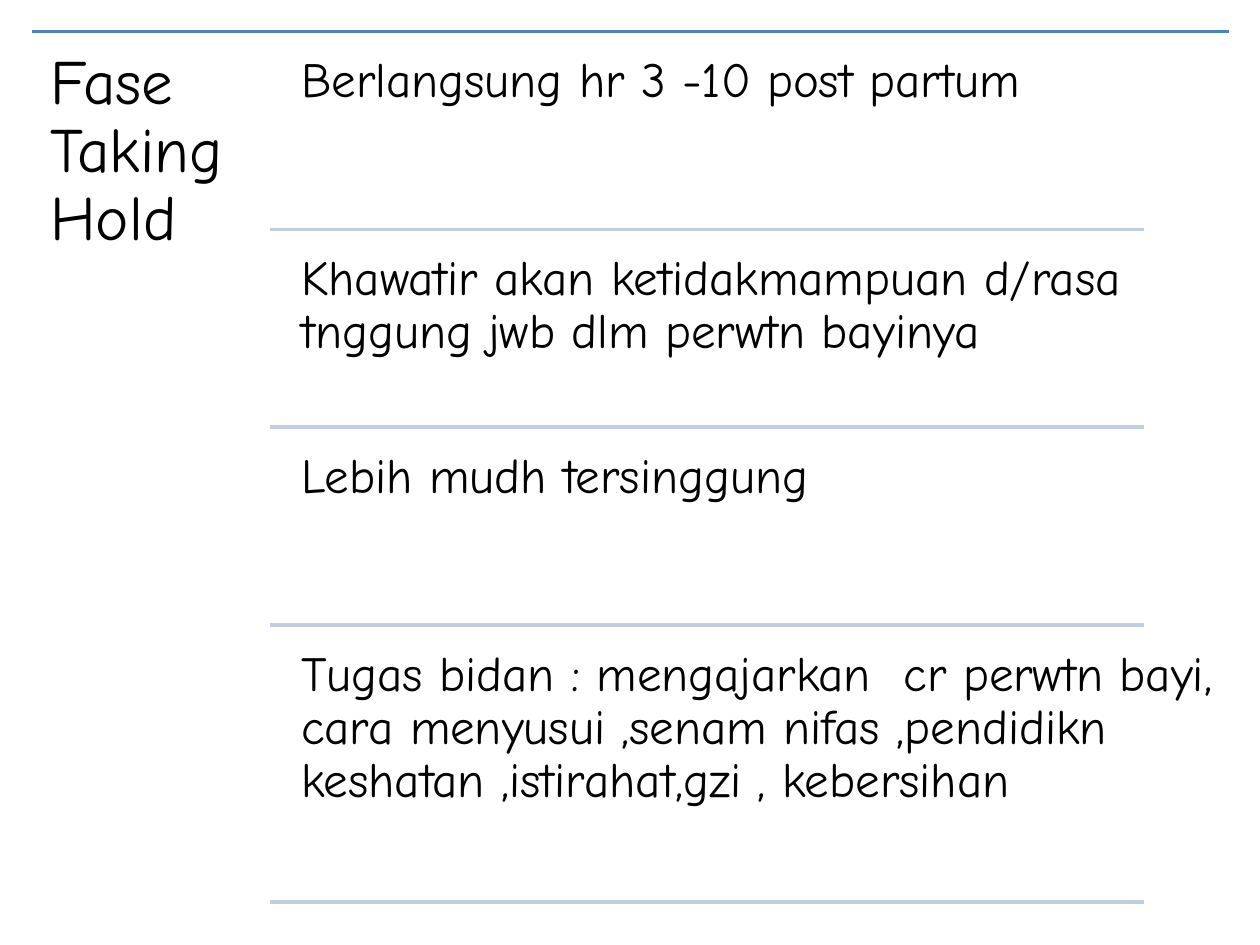
from pptx import Presentation
from pptx.dml.color import RGBColor
from pptx.enum.shapes import MSO_CONNECTOR as CONN
from pptx.enum.text import MSO_ANCHOR as ANCHOR, MSO_AUTO_SIZE as AUTO
from pptx.oxml.ns import qn
from pptx.util import Inches, Pt
from lxml.etree import SubElement


def rgb(value):
    return RGBColor.from_string(value)


def write(tf, text, size=28, font="Comic Neue", color="000000", spacing=0.9, after=0.35):
    p = tf.paragraphs[0]
    p.line_spacing = spacing
    p.space_after = Pt(round(size * after, 1))
    r = p.add_run()
    r.text = text
    r.font.size = Pt(size)
    r.font.name = font
    r.font.color.rgb = rgb(color)


class Deck:
    accent = "4F81BD"
    pale = "C2CDE1"
    weight = 2

    def __init__(self, width, height):
        self.prs = Presentation()
        self.prs.slide_width = Inches(width)
        self.prs.slide_height = Inches(height)
        self.s = self.prs.slides.add_slide(self.prs.slide_layouts[6])

    def text(self, left, top, width, height, text, inset=0.12, **style):
        sp = self.s.shapes.add_textbox(Inches(left), Inches(top), Inches(width), Inches(height))
        tf = sp.text_frame
        tf.word_wrap = True
        tf.auto_size = AUTO.NONE
        tf.vertical_anchor = ANCHOR.TOP
        tf.margin_left = tf.margin_right = Inches(inset)
        tf.margin_top = tf.margin_bottom = Inches(inset)
        write(tf, text, **style)

    def rule(self, left, right, y, color):
        sp = self.s.shapes.add_connector(
            CONN.STRAIGHT, Inches(left), Inches(y), Inches(right), Inches(y))
        sp.line.color.rgb = rgb(color)
        sp.line.width = Pt(self.weight)
        SubElement(sp.element.spPr, qn("a:effectLst"))


ROWS = [
    ("Berlangsung hr 3 -10 post partum", 7.41, 1.5),
    ("Khawatir akan ketidakmampuan d/rasa tnggung jwb dlm perwtn bayinya", 7.41, 1.5),
    ("Lebih mudh tersinggung", 7.41, 1.5),
    ("Tugas bidan : mengajarkan  cr perwtn bayi, cara menyusui ,senam nifas ,"
     "pendidikn keshatan ,istirahat,gzi , kebersihan", 7.47, 2.13),
]


def main():
    deck = Deck(10, 7.5)
    margin, gap = 0.25, 0.07
    deck.rule(margin, 9.75, margin, deck.accent)
    deck.text(margin, margin, 1.89, 6.99, "Fase Taking Hold", inset=0.15, size=36)
    y = margin
    for text, width, height in ROWS:
        y += gap
        deck.text(2.27, y, width, height, text)
        y += height
        deck.rule(2.14, 9.08, y, deck.pale)
    deck.prs.save("out.pptx")


if __name__ == "__main__":
    main()
